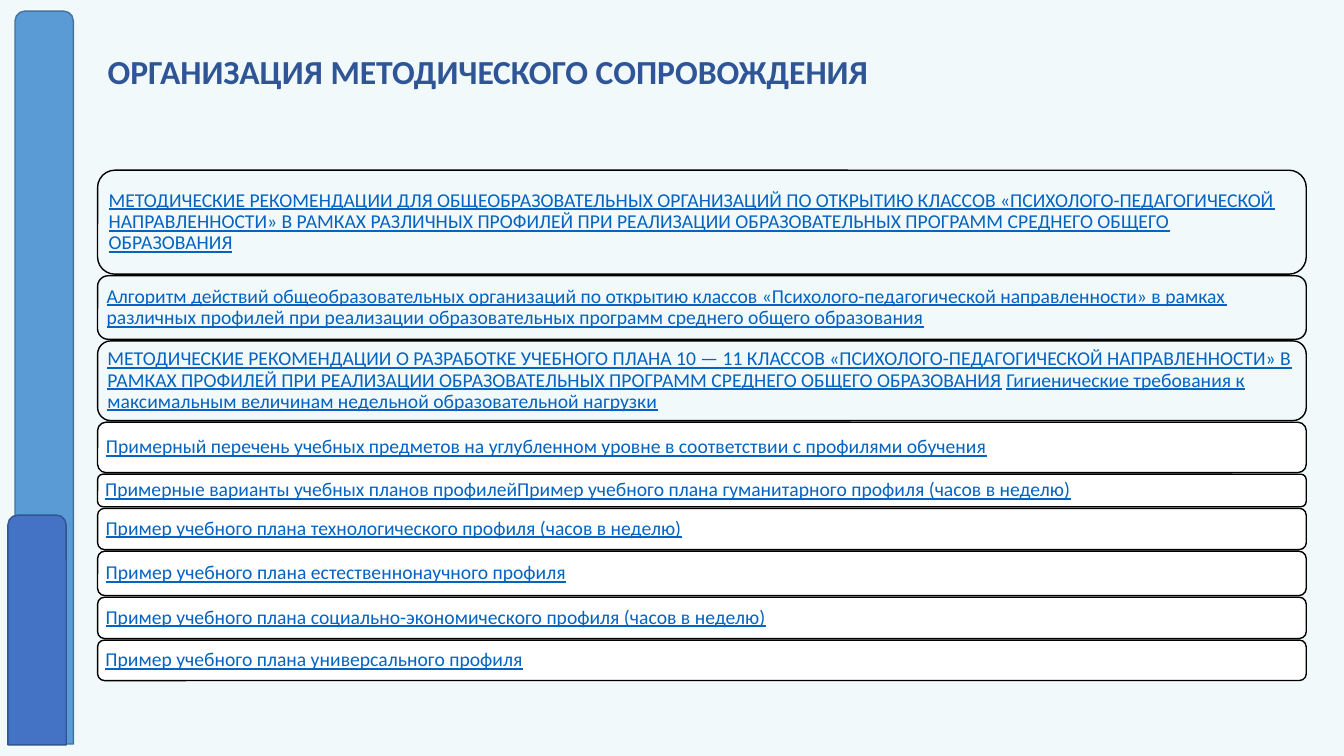
from dataclasses import dataclass

from pptx import Presentation
from pptx.dml.color import RGBColor as Rgb
from pptx.enum.shapes import MSO_SHAPE as Preset
from pptx.enum.text import MSO_ANCHOR as Anchor, MSO_AUTO_SIZE as AutoSize, PP_ALIGN as Align
from pptx.util import Cm, Pt


@dataclass(frozen=True)
class Theme:
    """Colours and type sizes of the slide."""
    font: str = "Calibri"
    title_size: int = 24
    link_size: int = 14
    background: str = "F1F9FA"
    title: str = "2F5597"
    link: str = "0563C1"
    card_fill: str = "FFFFFF"
    card_line: str = "000000"
    rail_fill: str = "5B9BD5"
    rail_line: str = "43739E"
    accent_fill: str = "4472C4"
    accent_line: str = "325491"


THEME = Theme()
TITLE = "ОРГАНИЗАЦИЯ МЕТОДИЧЕСКОГО СОПРОВОЖДЕНИЯ"
CARD_LEFT, CARD_TOP, CARD_WIDTH, CARD_GAP = 2.46, 4.29, 30.46, 0.04
MATERIALS = [
    (2.62, None, [
        "МЕТОДИЧЕСКИЕ РЕКОМЕНДАЦИИ ДЛЯ ОБЩЕОБРАЗОВАТЕЛЬНЫХ ОРГАНИЗАЦИЙ ПО ОТКРЫТИЮ "
        "КЛАССОВ «ПСИХОЛОГО-ПЕДАГОГИЧЕСКОЙ НАПРАВЛЕННОСТИ» В РАМКАХ РАЗЛИЧНЫХ ПРОФИЛЕЙ "
        "ПРИ РЕАЛИЗАЦИИ ОБРАЗОВАТЕЛЬНЫХ ПРОГРАММ СРЕДНЕГО ОБЩЕГО ОБРАЗОВАНИЯ"]),
    (1.6, None, [
        "Алгоритм действий общеобразовательных организаций по открытию классов "
        "«Психолого-педагогической направленности» в рамках различных профилей "
        "при реализации образовательных программ среднего общего образования"]),
    (2.01, None, [
        "МЕТОДИЧЕСКИЕ РЕКОМЕНДАЦИИ О РАЗРАБОТКЕ УЧЕБНОГО ПЛАНА 10 — 11 КЛАССОВ "
        "«ПСИХОЛОГО-ПЕДАГОГИЧЕСКОЙ НАПРАВЛЕННОСТИ» В РАМКАХ ПРОФИЛЕЙ ПРИ РЕАЛИЗАЦИИ "
        "ОБРАЗОВАТЕЛЬНЫХ ПРОГРАММ СРЕДНЕГО ОБЩЕГО ОБРАЗОВАНИЯ",
        "Гигиенические требования к максимальным величинам недельной "
        "образовательной нагрузки"]),
    (1.27, THEME.card_fill, [
        "Примерный перечень учебных предметов на углубленном уровне "
        "в соответствии с профилями обучения"]),
    (0.82, THEME.card_fill, [
        "Примерные варианты учебных планов профилейПример учебного плана "
        "гуманитарного профиля (часов в неделю)"]),
    (1.04, THEME.card_fill, ["Пример учебного плана технологического профиля (часов в неделю)"]),
    (1.12, THEME.card_fill, ["Пример учебного плана естественнонаучного профиля"]),
    (1.04, THEME.card_fill, [
        "Пример учебного плана социально-экономического профиля (часов в неделю)"]),
    (1.02, THEME.card_fill, ["Пример учебного плана универсального профиля"]),
]


def write_text(paragraph, text, *, size, color, bold=False, underline=False):
    """Append a formatted run to a paragraph."""
    run = paragraph.add_run()
    run.text = text
    font = run.font
    font.name, font.size, font.bold, font.underline = THEME.font, Pt(size), bold, underline
    font.color.rgb = Rgb.from_string(color)


def prepare_frame(frame, inset):
    """Set up a wrapped, left-aligned, middle-anchored frame and return its paragraph."""
    frame.auto_size = AutoSize.NONE
    frame.word_wrap = True
    frame.vertical_anchor = Anchor.MIDDLE
    frame.margin_left = frame.margin_right = Cm(inset)
    frame.margin_top = frame.margin_bottom = Cm(inset)
    paragraph = frame.paragraphs[0]
    paragraph.alignment = Align.LEFT
    paragraph.line_spacing = 0.9
    return paragraph


def add_panel(slide, preset, left, top, width, height, fill, line):
    """Add an outlined preset shape, hollow when fill is None."""
    panel = slide.shapes.add_shape(preset, Cm(left), Cm(top), Cm(width), Cm(height))
    panel.shadow.inherit = False
    if fill is None:
        panel.fill.background()
    else:
        panel.fill.solid()
        panel.fill.fore_color.rgb = Rgb.from_string(fill)
    panel.line.color.rgb = Rgb.from_string(line)
    panel.line.width = Pt(1)
    return panel


def add_heading(slide):
    """Place and fill the title placeholder."""
    heading = slide.shapes.title
    heading.left, heading.top, heading.width, heading.height = Cm(2.46), Cm(0.66), Cm(23.6), Cm(2.39)
    write_text(prepare_frame(heading.text_frame, 0.25), TITLE,
               size=THEME.title_size, color=THEME.title, bold=True)


def add_materials(slide):
    """Stack the cards with links to the materials."""
    top = CARD_TOP
    for height, fill, links in MATERIALS:
        card = add_panel(slide, Preset.ROUNDED_RECTANGLE, CARD_LEFT, top, CARD_WIDTH, height,
                         fill, THEME.card_line)
        paragraph = prepare_frame(card.text_frame, 0.15)
        for position, link in enumerate(links):
            if position:
                write_text(paragraph, " ", size=THEME.link_size, color=THEME.link)
            write_text(paragraph, link, size=THEME.link_size, color=THEME.link, underline=True)
        top += height + CARD_GAP


def add_rail(slide):
    """Draw the two overlapping bars at the left edge."""
    add_panel(slide, Preset.ROUND_2_SAME_RECTANGLE, 0.38, 0.28, 1.47, 18.47,
              THEME.rail_fill, THEME.rail_line)
    add_panel(slide, Preset.ROUND_2_SAME_RECTANGLE, 0.2, 12.98, 1.47, 5.79,
              THEME.accent_fill, THEME.accent_line)


def main():
    """Build the slide and save it."""
    deck = Presentation()
    deck.slide_width, deck.slide_height = Cm(33.87), Cm(19.05)
    slide = deck.slides.add_slide(deck.slide_layouts.get_by_name("Title Only"))
    slide.background.fill.solid()
    slide.background.fill.fore_color.rgb = Rgb.from_string(THEME.background)
    add_heading(slide)
    add_materials(slide)
    add_rail(slide)
    deck.save("out.pptx")


if __name__ == "__main__":
    main()
